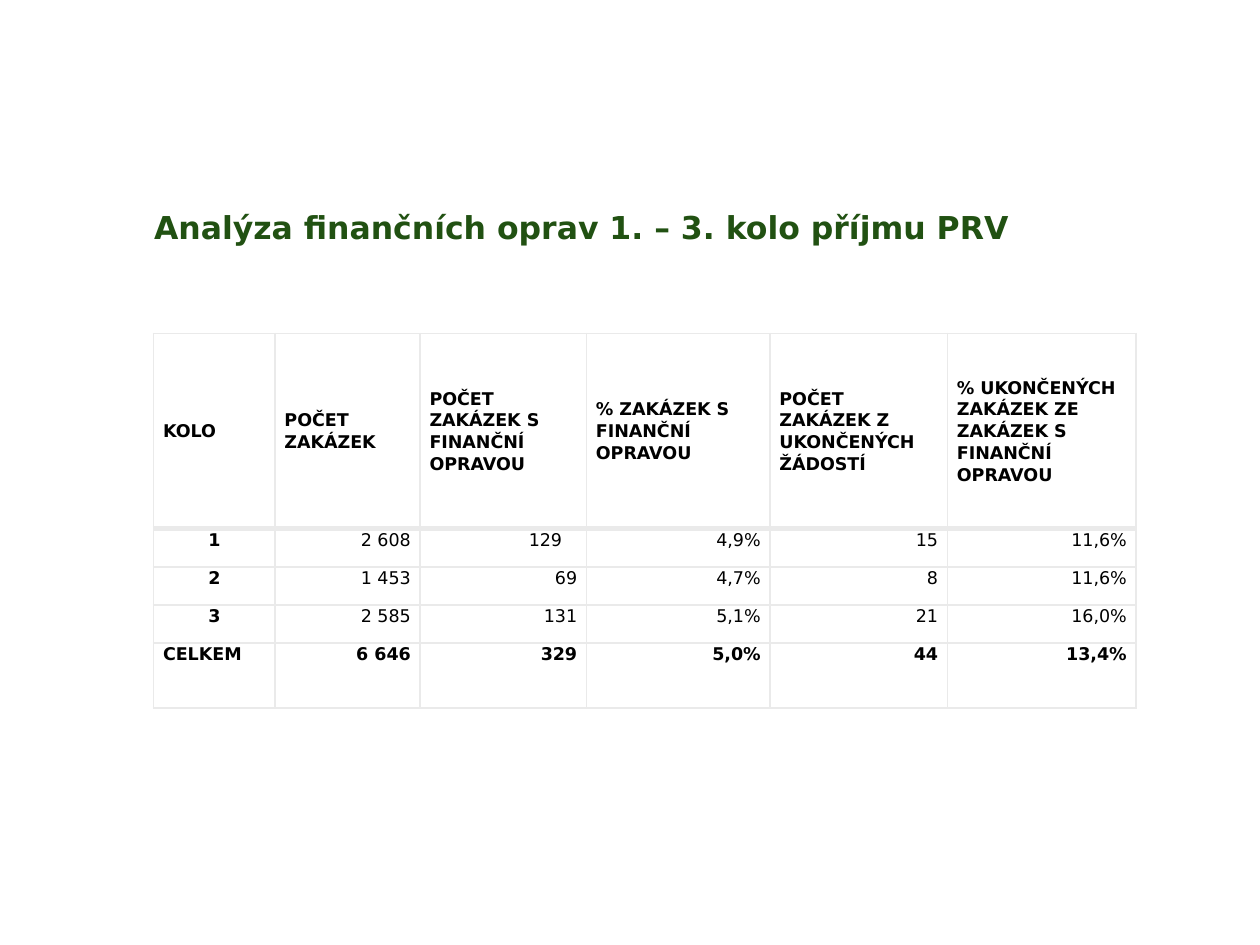
import pptx
import pptx.dml.color
import pptx.enum.text
import pptx.oxml
import pptx.oxml.ns
import pptx.util

Pt = pptx.util.Pt
ALIGN = pptx.enum.text.PP_ALIGN
ANCHOR = pptx.enum.text.MSO_ANCHOR
COLORS = {"title": "215112", "text": "000000", "cell": "FFFFFF", "border": "EAEAEA"}

HEADER = [
    "KOLO",
    "POČET ZAKÁZEK",
    "POČET ZAKÁZEK S FINANČNÍ OPRAVOU",
    "% ZAKÁZEK S FINANČNÍ OPRAVOU",
    "POČET ZAKÁZEK Z UKONČENÝCH ŽÁDOSTÍ",
    "% UKONČENÝCH ZAKÁZEK ZE ZAKÁZEK S FINANČNÍ OPRAVOU",
]
ROUNDS = [
    ["1", "2 608", "129", "4,9%", "15", "11,6%"],
    ["2", "1 453", "69", "4,7%", "8", "11,6%"],
    ["3", "2 585", "131", "5,1%", "21", "16,0%"],
]
TOTAL = ["CELKEM", "6 646", "329", "5,0%", "44", "13,4%"]
COL_WIDTHS = [69.4, 82.9, 95.1, 104.9, 101.4, 107.8]
ROW_HEIGHTS = [111.5, 21.8, 21.8, 21.8, 37]


class Deck:
    font = "DejaVu Sans"

    def __init__(self, width, height):
        self.prs = pptx.Presentation()
        self.prs.slide_width, self.prs.slide_height = Pt(width), Pt(height)
        self.slide = self.prs.slides.add_slide(self.prs.slide_layouts[6])

    def run(self, p, text, size, color, bold):
        r = p.add_run()
        r.text = text
        r.font.name, r.font.size, r.font.bold = self.font, Pt(size), bold
        r.font.color.rgb = pptx.dml.color.RGBColor.from_string(COLORS[color])

    def title(self, text, left, top, width, height):
        tf = self.slide.shapes.add_textbox(Pt(left), Pt(top), Pt(width), Pt(height)).text_frame
        tf.word_wrap = True
        tf.vertical_anchor = ANCHOR.BOTTOM
        tf.margin_left, tf.margin_right = Pt(28), Pt(10)
        tf.margin_top = tf.margin_bottom = Pt(6.5)
        self.run(tf.paragraphs[0], text, 18, "title", True)

    def borders(self, cell, widths):
        """Draw cell borders; widths maps L, R, T, B to points, in that order."""
        tc_pr = cell._tc.get_or_add_tcPr()
        for i, (side, width) in enumerate(widths.items()):
            tc_pr.insert(i, pptx.oxml.parse_xml(
                f'<a:ln{side} {pptx.oxml.ns.nsdecls("a")} w="{Pt(width)}"><a:solidFill>'
                f'<a:srgbClr val="{COLORS["border"]}"/></a:solidFill></a:ln{side}>'))

    def cell(self, cell, text, align, bold, anchor):
        cell.fill.solid()
        cell.fill.fore_color.rgb = pptx.dml.color.RGBColor.from_string(COLORS["cell"])
        cell.margin_left = cell.margin_right = Pt(5.4)
        cell.margin_top = cell.margin_bottom = 0
        cell.vertical_anchor = anchor
        p = cell.text_frame.paragraphs[0]
        p.alignment, p.line_spacing = align, 1.07
        self.run(p, text, 10, "text", bold)

    def table(self, rows, left, top, col_widths, row_heights):
        """Add a table with a header row, a label column and a bold last row."""
        table = self.slide.shapes.add_table(
            len(rows), len(col_widths), Pt(left), Pt(top),
            Pt(sum(col_widths)), Pt(sum(row_heights))).table
        for col, width in zip(table.columns, col_widths):
            col.width = Pt(width)
        for row, height in zip(table.rows, row_heights):
            row.height = Pt(height)
        last = len(rows) - 1
        for i, row in enumerate(rows):
            for j, text in enumerate(row):
                if i == 0 or (i == last and j == 0):
                    align = ALIGN.LEFT
                else:
                    align = ALIGN.CENTER if j == 0 else ALIGN.RIGHT
                cell = table.cell(i, j)
                self.cell(cell, text, align, i in (0, last) or j == 0,
                          ANCHOR.MIDDLE if i == 0 else ANCHOR.TOP)
                self.borders(cell, {"L": 1, "R": 1, "T": 3 if i == 1 else 1,
                                    "B": 3 if i == 0 else 1})
        return table


def main():
    deck = Deck(720, 540)
    deck.title("Analýza finančních oprav 1. – 3. kolo příjmu PRV", 60, 111.6, 536.4, 35.3)
    table = deck.table([HEADER, *ROUNDS, TOTAL], 87.8, 190.6, COL_WIDTHS, ROW_HEIGHTS)
    table.cell(1, 2).margin_right = Pt(14)
    deck.prs.save("out.pptx")


if __name__ == "__main__":
    main()
